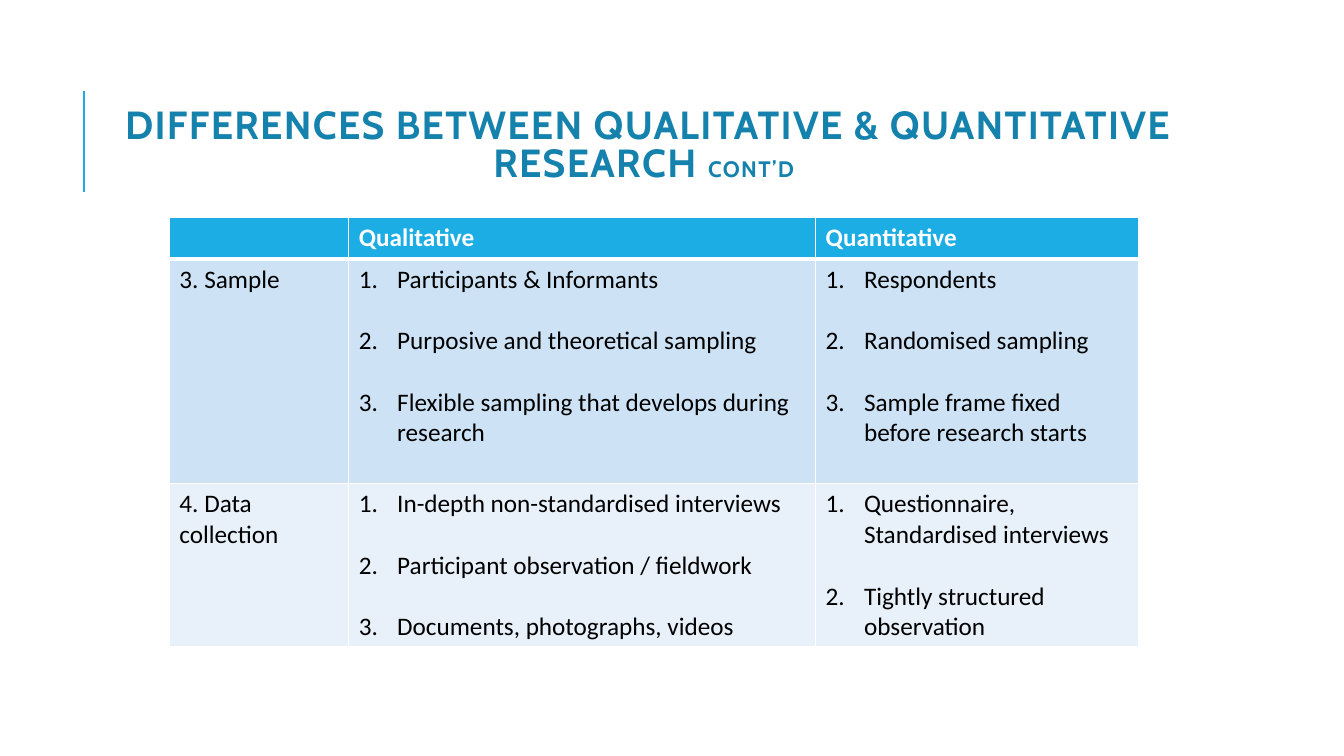
from lxml.etree import SubElement
from pptx import Presentation
from pptx.dml.color import RGBColor
from pptx.enum.text import MSO_ANCHOR, PP_ALIGN
from pptx.oxml.ns import qn
from pptx.util import Emu, Pt

PX = 9144  # EMU; 100 px to the inch
WHITE = RGBColor(0xFF, 0xFF, 0xFF)
BLACK = RGBColor(0x00, 0x00, 0x00)
ACCENT = RGBColor(0x1C, 0xAD, 0xE4)
TITLE_BLUE = RGBColor(0x14, 0x82, 0xAC)
ROW_FILLS = [RGBColor(0xCD, 0xE3, 0xF5), RGBColor(0xE8, 0xF1, 0xFA)]

COLUMN_WIDTHS = [178, 463, 320]
ROW_HEIGHTS = [41, 223, 162]
LIST_INDENT = 38
LINE_GAP = Pt(22)

HEADINGS = ["", "Qualitative", "Quantitative"]
TOPICS = [
    ("3. Sample",
     ["Participants & Informants",
      "Purposive and theoretical sampling",
      "Flexible sampling that develops during research"],
     ["Respondents",
      "Randomised sampling",
      "Sample frame fixed before research starts"]),
    ("4. Data collection",
     ["In-depth non-standardised interviews",
      "Participant observation / fieldwork",
      "Documents, photographs, videos"],
     ["Questionnaire, Standardised interviews",
      "Tightly structured observation"]),
]


def px(length):
    return Emu(length * PX)


def add_run(paragraph, text, font_name, size, color, bold=False):
    run = paragraph.add_run()
    run.text = text
    run.font.name = font_name
    run.font.size = Pt(size)
    run.font.bold = bold
    run.font.color.rgb = color
    return run


def add_title_rule(slide):
    rule = slide.shapes.add_connector(1, px(83), px(190), px(83), px(90))
    rule.line.color.rgb = ACCENT
    rule.line.width = Pt(1.5)
    SubElement(rule.line._get_or_add_ln().getparent(), qn("a:effectLst"))


def add_title(slide):
    title = slide.shapes.add_textbox(px(112), px(64), px(1063), px(164))
    frame = title.text_frame
    frame.word_wrap = True
    frame.vertical_anchor = MSO_ANCHOR.MIDDLE
    heading = frame.paragraphs[0]
    heading.alignment = PP_ALIGN.CENTER
    heading.line_spacing = 0.8
    parts = [
        ("DIFFERENCES BETWEEN QUALITATIVE & QUANTITATIVE RESEARCH ", 28),
        ("CONT’D", 16),
        (" ", 28),
    ]
    for text, size in parts:
        run = add_run(heading, text, "Cabin", size, TITLE_BLUE, bold=True)
        run.font._element.set("spc", "100")


def style_cell(cell, fill, top_width, bottom_width):
    """Give the cell white borders, widths in points, and a solid fill."""
    properties = cell._tc.get_or_add_tcPr()
    widths = {"L": 1, "R": 1, "T": top_width, "B": bottom_width}
    for side, width in widths.items():
        border = SubElement(properties, qn(f"a:ln{side}"), w=str(Pt(width)))
        solid = SubElement(border, qn("a:solidFill"))
        SubElement(solid, qn("a:srgbClr"), val=str(WHITE))
    cell.fill.solid()
    cell.fill.fore_color.rgb = fill


def write_numbered_list(cell, items):
    frame = cell.text_frame
    for index, item in enumerate(items):
        paragraph = frame.add_paragraph() if index else frame.paragraphs[0]
        if index:
            paragraph.space_before = LINE_GAP
        properties = paragraph._p.get_or_add_pPr()
        properties.set("marL", str(px(LIST_INDENT)))
        properties.set("indent", str(-px(LIST_INDENT)))
        SubElement(properties, qn("a:buFont"), typeface="+mj-lt")
        SubElement(properties, qn("a:buAutoNum"), type="arabicPeriod")
        add_run(paragraph, item, "Calibri", 18, BLACK)


def add_comparison(slide):
    table = slide.shapes.add_table(
        len(ROW_HEIGHTS), len(COLUMN_WIDTHS), px(168), px(216),
        px(sum(COLUMN_WIDTHS)), px(sum(ROW_HEIGHTS))).table
    for column, width in zip(table.columns, COLUMN_WIDTHS):
        column.width = px(width)
    for row, height in zip(table.rows, ROW_HEIGHTS):
        row.height = px(height)

    for cell, heading in zip(table.rows[0].cells, HEADINGS):
        style_cell(cell, ACCENT, 1, 3)
        if heading:
            add_run(cell.text_frame.paragraphs[0], heading, "Calibri", 18,
                    WHITE, bold=True)

    for row_index, (topic, *lists) in enumerate(TOPICS, start=1):
        topic_cell, *list_cells = table.rows[row_index].cells
        for cell in (topic_cell, *list_cells):
            style_cell(cell, ROW_FILLS[row_index - 1],
                       3 if row_index == 1 else 1, 1)
        add_run(topic_cell.text_frame.paragraphs[0], topic, "Calibri", 18,
                BLACK)
        for cell, items in zip(list_cells, lists):
            write_numbered_list(cell, items)


def main():
    presentation = Presentation()
    presentation.slide_width = px(1333)
    presentation.slide_height = px(750)
    slide = presentation.slides.add_slide(presentation.slide_layouts[6])
    add_title_rule(slide)
    add_title(slide)
    add_comparison(slide)
    presentation.save("out.pptx")


if __name__ == "__main__":
    main()
